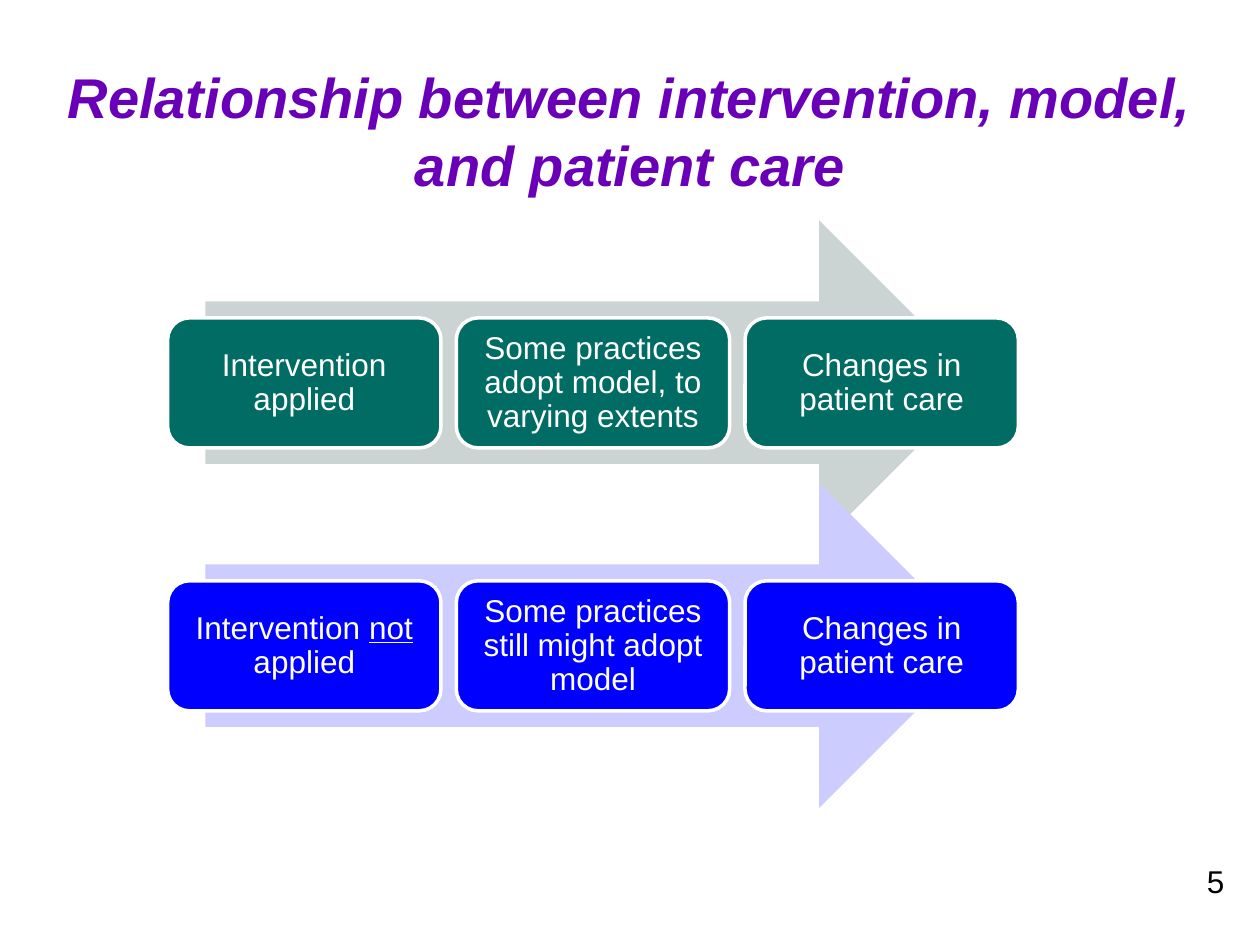
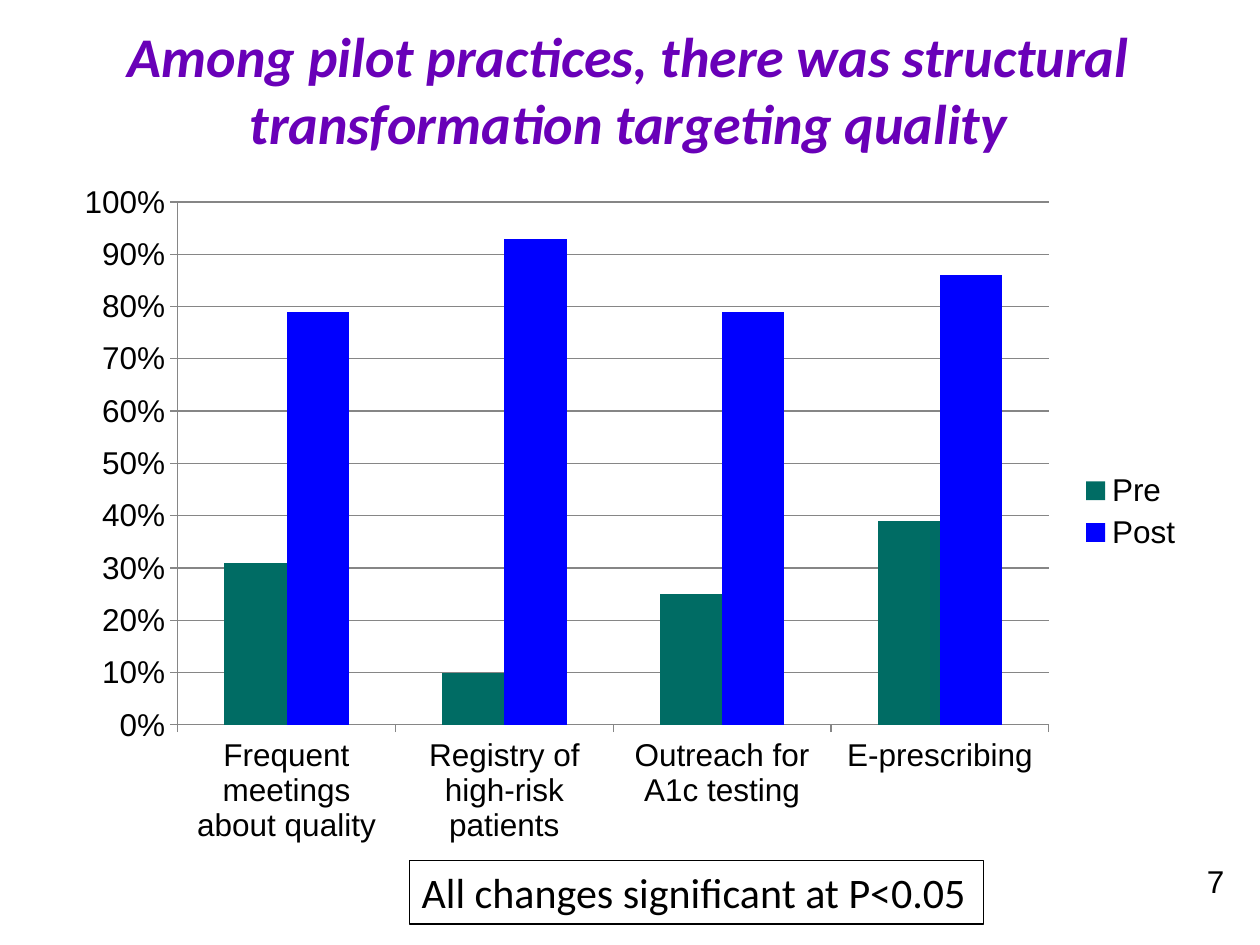
import pptx
import pptx.chart.data
import pptx.dml.color
import pptx.enum.chart
import pptx.enum.shapes
import pptx.enum.text
import pptx.oxml
import pptx.util
from pptx.util import Cm, Pt

COLOURS = {
    "title": "6900B8",
    "green": "006C64",
    "pale green": "CCD4D3",
    "blue": "0000FF",
    "pale blue": "CCCCFF",
    "axis": "868686",
    "white": "FFFFFF",
    "black": "000000",
}


def colour(name):
    return pptx.dml.color.RGBColor.from_string(COLOURS[name])


def add_run(paragraph, text, size, font_name, colour_name):
    run = paragraph.add_run()
    run.text = text
    run.font.size = Pt(size)
    run.font.name = font_name
    run.font.color.rgb = colour(colour_name)
    return run


presentation = pptx.Presentation()
presentation.slide_width = Cm(25.4)
presentation.slide_height = Cm(19.05)

headings = [
    ("Relationship between intervention, model, and patient care", "Arial", (0.43, 1.27, 24.54, 1.7), "5"),
    ("Among pilot practices, there was structural transformation targeting quality", "Calibri", (0.84, 0.43, 23.67, 1.7), "7"),
]
for title, font_name, place, number in headings:
    slide = presentation.slides.add_slide(presentation.slide_layouts[6])

    title_box = slide.shapes.add_textbox(*[Cm(length) for length in place])
    frame = title_box.text_frame
    frame.word_wrap = True
    frame.margin_left = frame.margin_right = frame.margin_top = frame.margin_bottom = 0
    paragraph = frame.paragraphs[0]
    paragraph.alignment = pptx.enum.text.PP_ALIGN.CENTER
    run = add_run(paragraph, title, 32, font_name, "title")
    run.font.bold = True
    run.font.italic = True

    number_box = slide.shapes.add_textbox(Cm(24.08), Cm(17.25), Cm(0.86), Cm(1.02))
    number_box.text_frame.word_wrap = False
    add_run(number_box.text_frame.paragraphs[0], number, 18, "Arial", "black")

process_slide, chart_slide = presentation.slides

processes = [
    ("green", "pale green", [
        ["Intervention applied"],
        ["Some practices adopt model, to varying extents"],
        ["Changes in patient care"],
    ]),
    ("blue", "pale blue", [
        ["Intervention ", "not", " applied"],
        ["Some practices still might adopt model"],
        ["Changes in patient care"],
    ]),
]
for row, (step_colour, arrow_colour, steps) in enumerate(processes):
    row_offset = 5.3 * row
    arrow = process_slide.shapes.add_shape(
        pptx.enum.shapes.MSO_SHAPE.RIGHT_ARROW,
        Cm(4.14), Cm(4.44 + row_offset), Cm(15.65), Cm(6.55))
    arrow.shadow.inherit = False
    arrow.fill.solid()
    arrow.fill.fore_color.rgb = colour(arrow_colour)
    arrow.line.fill.background()

    for column, pieces in enumerate(steps):
        step = process_slide.shapes.add_shape(
            pptx.enum.shapes.MSO_SHAPE.ROUNDED_RECTANGLE,
            Cm(3.38 + 5.82 * column), Cm(6.41 + row_offset), Cm(5.51), Cm(2.62))
        step.shadow.inherit = False
        step.fill.solid()
        step.fill.fore_color.rgb = colour(step_colour)
        step.line.color.rgb = colour("white")
        step.line.width = Pt(2)
        frame = step.text_frame
        frame.word_wrap = True
        frame.vertical_anchor = pptx.enum.text.MSO_ANCHOR.MIDDLE
        frame.margin_left = frame.margin_right = Cm(0.18)
        frame.margin_top = frame.margin_bottom = Cm(0.18)
        paragraph = frame.paragraphs[0]
        paragraph.alignment = pptx.enum.text.PP_ALIGN.CENTER
        paragraph.line_spacing = 0.9
        for piece in pieces:
            run = add_run(paragraph, piece, 18, "Arial", "white")
            run.font.underline = piece == "not"

chart_data = pptx.chart.data.CategoryChartData(number_format="0%")
chart_data.categories = [
    "Frequent meetings about quality",
    "Registry of high-risk patients",
    "Outreach for A1c testing",
    "E-prescribing",
]
chart_data.add_series("Pre", [0.31, 0.1, 0.25, 0.39])
chart_data.add_series("Post", [0.79, 0.93, 0.79, 0.86])
chart = chart_slide.shapes.add_chart(
    pptx.enum.chart.XL_CHART_TYPE.COLUMN_CLUSTERED,
    Cm(1.3), Cm(3.38), Cm(22.81), Cm(13.87), chart_data).chart
chart.has_title = False
chart.font.size = Pt(18)
chart.font.name = "Arial"
chart.font.color.rgb = colour("black")
chart.has_legend = True
chart.legend.position = pptx.enum.chart.XL_LEGEND_POSITION.RIGHT
chart.legend.include_in_layout = False

plot = chart.plots[0]
plot.gap_width = 150
plot.overlap = 0
plot.vary_by_categories = False
for series, series_colour in zip(plot.series, ["green", "blue"]):
    series.format.fill.solid()
    series.format.fill.fore_color.rgb = colour(series_colour)

value_axis = chart.value_axis
value_axis.minimum_scale = 0
value_axis.maximum_scale = 1
value_axis.major_unit = 0.1
value_axis.has_major_gridlines = True
value_axis.major_gridlines.format.line.color.rgb = colour("axis")
value_axis.tick_labels.number_format = "0%"
value_axis.tick_labels.number_format_is_linked = False
for axis in [value_axis, chart.category_axis]:
    axis.major_tick_mark = pptx.enum.chart.XL_TICK_MARK.OUTSIDE
    axis.format.line.color.rgb = colour("axis")

plot_area = chart._chartSpace.chart.plotArea
for old_layout in plot_area.findall(pptx.oxml.ns.qn("c:layout")):
    plot_area.remove(old_layout)
plot_area.insert(0, pptx.oxml.parse_xml(
    '<c:layout xmlns:c="http://schemas.openxmlformats.org/drawingml/2006/chart"><c:manualLayout>'
    '<c:layoutTarget val="inner"/><c:xMode val="edge"/><c:yMode val="edge"/>'
    '<c:x val="0.1"/><c:y val="0.05"/><c:w val="0.77"/><c:h val="0.76"/>'
    '</c:manualLayout></c:layout>'))

note = chart_slide.shapes.add_textbox(Cm(8.25), Cm(17.35), Cm(11.58), Cm(1.28))
note.line.color.rgb = colour("black")
note.line.width = Pt(0.75)
note.text_frame.word_wrap = False
add_run(note.text_frame.paragraphs[0], "All changes significant at P<0.05", 24, "Calibri", "black")

presentation.save("out.pptx")
